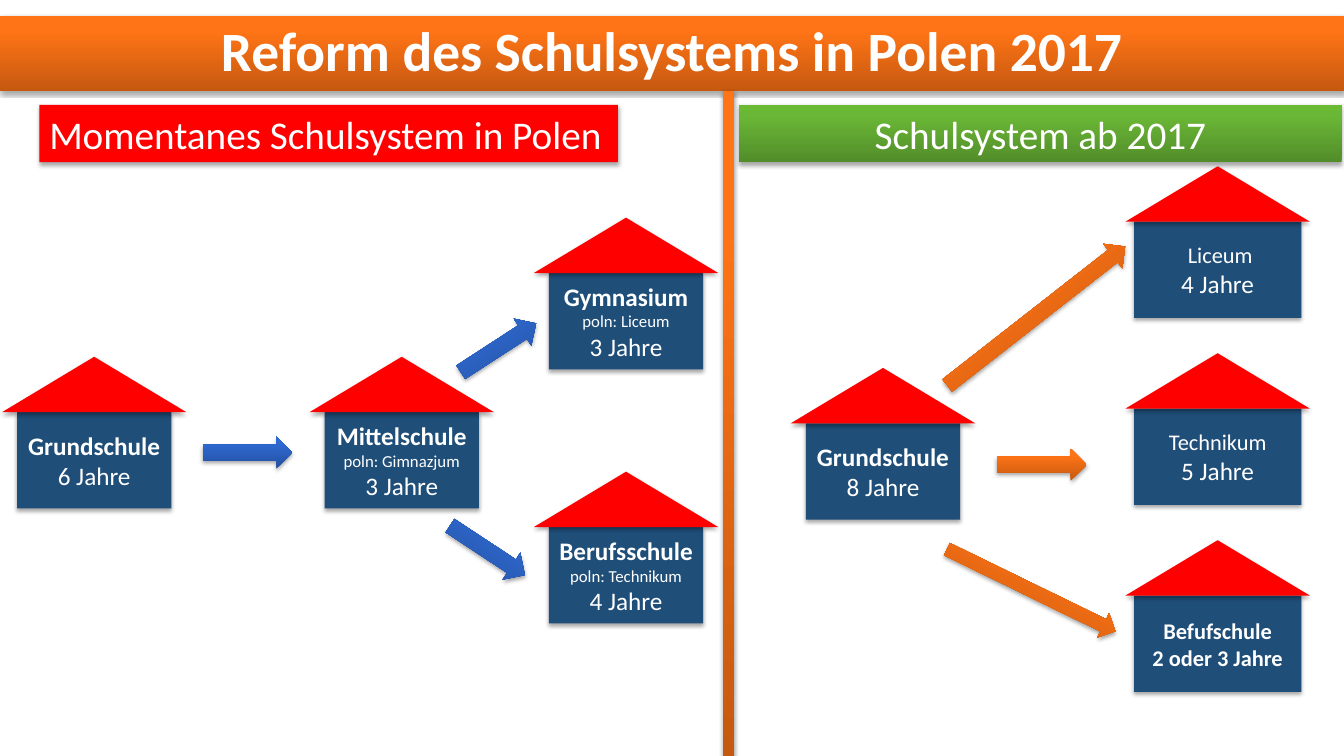
from dataclasses import dataclass

from lxml import etree
from pptx import Presentation
from pptx.dml.color import RGBColor
from pptx.enum.shapes import MSO_SHAPE as Preset
from pptx.enum.text import MSO_ANCHOR as Anchor, MSO_AUTO_SIZE as AutoSize, PP_ALIGN as Align
from pptx.oxml.ns import qn
from pptx.util import Inches, Pt


@dataclass(frozen=True)
class Theme:
    font: str = "Calibri"
    text: str = "FFFFFF"
    red: str = "FF0000"
    wall: str = "1F4E79"
    # Gradients run from bottom to top, with stops at 0, 80 and 100 percent
    orange: tuple = ("C65910", "FF7416", "FF7517")
    blue: tuple = ("2451A1", "2F69D1", "2C69D5")
    green: tuple = ("518D2A", "6AB636", "6ABA34")
    title: float = 39.6
    heading: int = 28
    large: int = 18
    medium: int = 16
    small: int = 12


theme = Theme()
presentation = Presentation()
presentation.slide_width, presentation.slide_height = Inches(13.33), Inches(7.5)
slide = presentation.slides.add_slide(presentation.slide_layouts[5])
shapes = slide.shapes

# Grid of 100 columns and 100 rows
column = presentation.slide_width / 100
row = presentation.slide_height / 100


def decorate(shape, box, fill):
    """Place a shape on the grid and give it a fill and a soft shadow."""
    left, top, width, height = box
    shape.left, shape.top = int(left * column), int(top * row)
    shape.width, shape.height = int(width * column), int(height * row)
    shape.line.fill.background()
    properties = shape._element.spPr
    if isinstance(fill, str):
        shape.fill.solid()
        shape.fill.fore_color.rgb = RGBColor.from_string(fill)
    else:
        shape.fill.gradient()
        shape.fill.gradient_angle = 90
        stops = properties.find(qn("a:gradFill")).find(qn("a:gsLst"))
        for stop in list(stops):
            stops.remove(stop)
        for position, color in zip((0, 80, 100), fill):
            stop = etree.SubElement(stops, qn("a:gs"), pos=str(position * 1000))
            etree.SubElement(stop, qn("a:srgbClr"), val=color)
    shape.shadow.inherit = False
    shadow = etree.SubElement(properties.find(qn("a:effectLst")), qn("a:outerShdw"),
                              blurRad=str(Pt(3.1)), dist=str(Pt(1.8)),
                              dir="5400000", rotWithShape="0")
    shadow_color = etree.SubElement(shadow, qn("a:srgbClr"), val="000000")
    etree.SubElement(shadow_color, qn("a:alpha"), val="35000")
    return shape


def write(shape, lines, align=Align.CENTER):
    """Write lines of (text, size, bold) into a shape."""
    frame = shape.text_frame
    frame.word_wrap = True
    frame.vertical_anchor = Anchor.MIDDLE
    frame.text = "\n".join(text for text, size, bold in lines)
    for paragraph, (text, size, bold) in zip(frame.paragraphs, lines):
        paragraph.alignment = align
        font = paragraph.runs[0].font
        font.name, font.size, font.bold = theme.font, Pt(size), bold
        font.color.rgb = RGBColor.from_string(theme.text)
    return frame


# Divider between the two systems
decorate(shapes.add_shape(Preset.RECTANGLE, 0, 0, 0, 0), (53.78, 12, 0.83, 88), theme.orange)

# Title band
title = decorate(shapes.title, (0, 2.13, 100, 9.87), theme.orange)
title_frame = write(title, [("Reform des Schulsystems in Polen 2017", theme.title, True)])
title_frame.auto_size = AutoSize.NONE
title_frame.paragraphs[0].line_spacing = 0.9

# Headings of the two halves
headings = [
    ("Momentanes Schulsystem in Polen", 2.93, 43.05, theme.red, Align.LEFT),
    ("Schulsystem ab 2017", 54.98, 44.85, theme.green, Align.CENTER),
]
for text, left, width, fill, align in headings:
    heading = decorate(shapes.add_shape(Preset.RECTANGLE, 0, 0, 0, 0),
                       (left, 13.87, width, 7.6), fill)
    write(heading, [(text, theme.heading, False)], align)

# Schools: centre, roof top, wall width, lines of text
roof_width, roof_height, wall_height = 13.73, 7.33, 12.73
narrow, wide = 11.48, 12.45
new_center, new_top, new_step = 90.6, 22, 24.73
large, medium, small = theme.large, theme.medium, theme.small
schools = [
    (7.01, 47.2, narrow, [("Grundschule", large, True), ("6 Jahre", large, False)]),
    (29.89, 47.2, narrow, [("Mittelschule", large, True), ("poln: Gimnazjum", small, False),
                           ("3 Jahre", large, False)]),
    (46.58, 28.8, narrow, [("Gymnasium", large, True), ("poln: Liceum", small, False),
                           ("3 Jahre", large, False)]),
    (46.58, 62.4, narrow, [("Berufsschule", large, True), ("poln: Technikum", small, False),
                           ("4 Jahre", large, False)]),
    (65.7, 48.67, narrow, [("Grundschule", large, True), ("8 Jahre", large, False)]),
    (new_center, new_top, wide, [(" Liceum", medium, False), ("4 Jahre", large, False)]),
    (new_center, new_top + new_step, wide, [("Technikum", medium, False),
                                            ("5 Jahre", large, False)]),
    (new_center, new_top + 2 * new_step, wide, [("Befufschule", medium, True),
                                                ("2 oder 3 Jahre", medium, True)]),
]
for center, top, wall_width, lines in schools:
    wall = decorate(shapes.add_shape(Preset.RECTANGLE, 0, 0, 0, 0),
                    (center - wall_width / 2, top + roof_height, wall_width, wall_height),
                    theme.wall)
    write(wall, lines)
    decorate(shapes.add_shape(Preset.ISOSCELES_TRIANGLE, 0, 0, 0, 0),
             (center - roof_width / 2, top, roof_width, roof_height), theme.red)

# Arrows from school to school: box, rotation, fill
arrows = [
    ((15.08, 57.73, 6.68, 4.27), 0, theme.blue),
    ((33.75, 43.87, 6.68, 4.27), 327, theme.blue),
    ((32.93, 70.67, 6.68, 4.27), 33.4, theme.blue),
    ((74.18, 59.33, 6.68, 4.27), 0, theme.orange),
    ((68.7, 39.73, 16.8, 4.13), 322, theme.orange),
    ((69.75, 76.27, 13.95, 3.6), 26, theme.orange),
]
for box, rotation, fill in arrows:
    arrow = decorate(shapes.add_shape(Preset.RIGHT_ARROW, 0, 0, 0, 0), box, fill)
    arrow.rotation = rotation

presentation.save("out.pptx")
